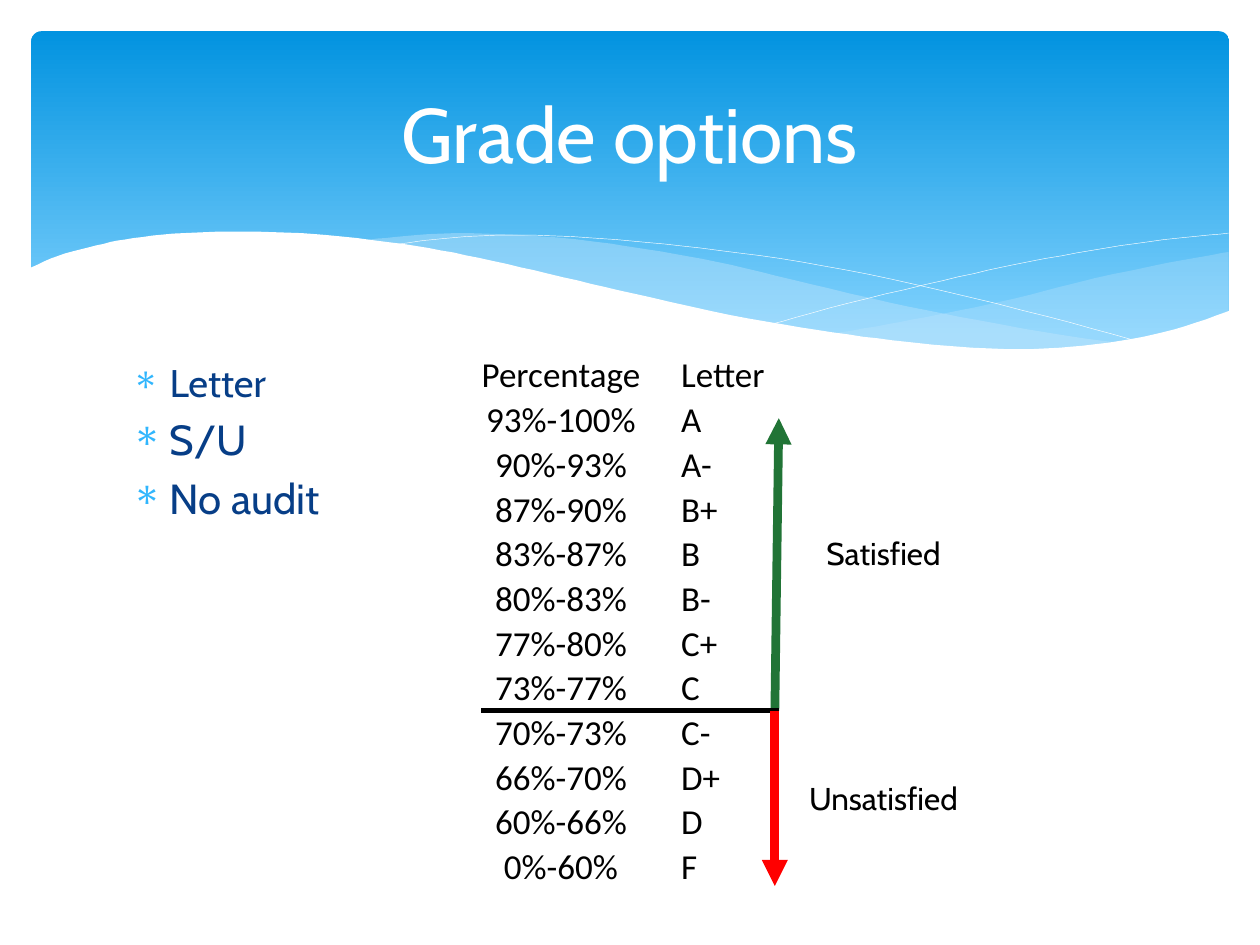
"""Build the "Grade options" slide with its wave banner, bullets and grade table."""
from lxml.etree import SubElement
from pptx import Presentation
from pptx.dml.color import RGBColor
from pptx.enum.shapes import MSO_CONNECTOR, MSO_SHAPE
from pptx.enum.text import MSO_ANCHOR, PP_ALIGN
from pptx.oxml.ns import qn
from pptx.util import Cm, Pt

WHITE = RGBColor(0xFF, 0xFF, 0xFF)
BLACK = RGBColor(0, 0, 0)
BANNER_TOP = RGBColor(0x02, 0x93, 0xE0)
BANNER_BOTTOM = RGBColor(0x83, 0xD3, 0xFE)
PALE_BLUE = RGBColor(0xC6, 0xE7, 0xFC)
NAVY = RGBColor(0x07, 0x3E, 0x87)
GREEN = RGBColor(0x21, 0x74, 0x36)
RED = RGBColor(0xFF, 0, 0)
BULLET_BLUE = "31B6FD"

RIGHT_SWELL = [
    [(2477, 508), (2375, 526), (2263, 549), (2187, 566), (2045, 602), (1913, 630),
     (1793, 653), (1679, 673)],
    [(1679, 673), (1791, 688), (1892, 699), (2012, 704), (2121, 704), (2238, 693),
     (2339, 673), (2410, 653), (2477, 627)],
]
MIDDLE_SWELL = [
    [(2268, 693), (2126, 673), (1969, 645), (1793, 610), (1598, 564), (1445, 528),
     (1306, 503), (1181, 485), (1067, 475), (917, 470), (795, 478), (726, 485)],
    [(726, 485), (869, 505), (1026, 536), (1140, 564), (1346, 610), (1527, 648),
     (1689, 676), (1834, 696), (1963, 704), (2103, 706), (2202, 701), (2268, 693)],
]
FALLING_LINE = [
    [(785, 495), (874, 483), (983, 475), (1100, 475), (1242, 483), (1412, 500),
     (1615, 528), (1847, 574), (2111, 638), (2304, 691)],
]
RISING_LINE = [
    [(1557, 653), (1707, 612), (1900, 566), (2047, 533), (2200, 505), (2347, 483),
     (2477, 470)],
]
FRONT_WAVE = [
    [(2482, 625), (2388, 658), (2283, 683), (2159, 699), (2055, 704), (1933, 699),
     (1798, 686), (1646, 665), (1471, 635), (1278, 592), (1135, 559), (993, 526),
     (864, 500), (742, 483), (635, 472), (490, 467), (371, 470), (269, 480),
     (193, 495), (117, 516), (58, 541)],
    [(58, 836), (2482, 836)],
]
GRADES = [
    ("Percentage", "Letter"), ("93%-100%", "A"), ("90%-93%", "A-"),
    ("87%-90%", "B+"), ("83%-87%", "B"), ("80%-83%", "B-"),
    ("77%-80%", "C+"), ("73%-77%", "C"), ("70%-73%", "C-"),
    ("66%-70%", "D+"), ("60%-66%", "D"), ("0%-60%", "F"),
]


def smooth_curve(knots, steps=5):
    """Return points on a Catmull-Rom curve through the knots."""
    padded = [knots[0], *knots, knots[-1]]
    points = [knots[0]]
    for a, b, c, d in zip(padded, padded[1:], padded[2:], padded[3:]):
        for step in range(1, steps + 1):
            t = step / steps
            points.append(tuple(
                0.5 * (2 * q + (r - p) * t + (2 * p - 5 * q + 4 * r - s) * t ** 2
                       + (3 * q - p - 3 * r + s) * t ** 3)
                for p, q, r, s in zip(a, b, c, d)))
    return points


def write_text(paragraph, text, size, color, font="Cabin", align=PP_ALIGN.LEFT):
    """Fill a paragraph and format its run."""
    paragraph.text = text
    paragraph.alignment = align
    span = paragraph.runs[0]
    span.font.size = Pt(size)
    span.font.name = font
    span.font.color.rgb = color


deck = Presentation()
deck.slide_width, deck.slide_height = Cm(25.4), Cm(19.05)
page = deck.slides.add_slide(deck.slide_layouts[6])

banner = page.shapes.add_shape(
    MSO_SHAPE.ROUNDED_RECTANGLE, Cm(0.63), Cm(0.63), Cm(24.15), Cm(6.86))
banner.adjustments[0] = 0.03
banner.shadow.inherit = False
banner.line.fill.background()
banner.fill.gradient()
banner.fill.gradient_angle = 270
for stop, color, position in zip(
        banner.fill.gradient_stops, (BANNER_TOP, BANNER_BOTTOM), (0, 0.9)):
    stop.color.rgb = color
    stop.position = position

for curves, fill, opacity in (
        (RIGHT_SWELL, PALE_BLUE, 29), (MIDDLE_SWELL, PALE_BLUE, 40),
        (FALLING_LINE, None, 100), (RISING_LINE, None, 100),
        (FRONT_WAVE, WHITE, 100)):
    points = [point for knots in curves for point in smooth_curve(knots)]
    builder = page.shapes.build_freeform(*points[0], scale=Cm(0.01))
    builder.add_line_segments(points[1:], close=fill is not None)
    wave = builder.convert_to_shape()
    wave.shadow.inherit = False
    if fill is None:
        wave.fill.background()
        wave.line.color.rgb = WHITE
        wave.line.width = Pt(0.25)
        continue
    wave.line.fill.background()
    wave.fill.solid()
    wave.fill.fore_color.rgb = fill
    if opacity < 100:
        tint = wave.fill._xPr.find(".//" + qn("a:srgbClr"))
        SubElement(tint, qn("a:alpha"), val=str(opacity * 1000))

options = page.shapes.add_textbox(Cm(2.41), Cm(7.11), Cm(6.48), Cm(9.58)).text_frame
options.word_wrap = True
for index, (text, size) in enumerate((("Letter", 22), ("S/U", 24), ("No audit", 24))):
    paragraph = options.add_paragraph() if index else options.paragraphs[0]
    write_text(paragraph, text, size, NAVY)
    paragraph.space_before = Pt(size * 0.2)
    properties = paragraph._p.get_or_add_pPr()
    properties.set("marL", str(Cm(0.76)))
    properties.set("indent", str(-Cm(0.76)))
    bullet_color = SubElement(properties, qn("a:buClr"))
    SubElement(bullet_color, qn("a:srgbClr"), val=BULLET_BLUE)
    SubElement(properties, qn("a:buChar"), char="∗")

title = page.shapes.add_textbox(Cm(1.27), Cm(0.94), Cm(22.86), Cm(3.48)).text_frame
title.word_wrap = True
title.vertical_anchor = MSO_ANCHOR.MIDDLE
write_text(title.paragraphs[0], "Grade options", 44, WHITE, align=PP_ALIGN.CENTER)

table = page.shapes.add_table(
    len(GRADES), 2, Cm(8.92), Cm(7.11), Cm(7.58), Cm(10.82)).table
table.first_row = table.horz_banding = False
table.columns[0].width, table.columns[1].width = Cm(4.78), Cm(2.8)
for row, grade in zip(table.rows, GRADES):
    for cell, text, align in zip(row.cells, grade, (PP_ALIGN.CENTER, PP_ALIGN.LEFT)):
        cell.fill.background()
        cell.vertical_anchor = MSO_ANCHOR.BOTTOM
        cell.margin_left = cell.margin_right = cell.margin_top = Cm(0.03)
        cell.margin_bottom = 0
        write_text(cell.text_frame.paragraphs[0], text, 20, BLACK, "Calibri", align)

for start_x, start_y, end_x, end_y, color, width, arrow in (
        (15.62, 14.33, 15.7, 8.43, GREEN, 5, True),
        (9.7, 14.33, 15.7, 14.33, BLACK, 3, False),
        (15.62, 14.33, 15.62, 17.86, RED, 5, True)):
    line = page.shapes.add_connector(
        MSO_CONNECTOR.STRAIGHT, Cm(start_x), Cm(start_y), Cm(end_x), Cm(end_y))
    line.line.color.rgb = color
    line.line.width = Pt(width)
    if arrow:
        SubElement(line.line._get_or_add_ln(), qn("a:tailEnd"), type="triangle")
    SubElement(line._element.spPr, qn("a:effectLst"))

for text, top in (("Satisfied", 10.64), ("Unsatisfied", 15.57)):
    label = page.shapes.add_textbox(Cm(15.93), Cm(top), Cm(3.76), Cm(1.02)).text_frame
    label.word_wrap = True
    write_text(label.paragraphs[0], text, 18, BLACK, align=PP_ALIGN.CENTER)

deck.save("out.pptx")
